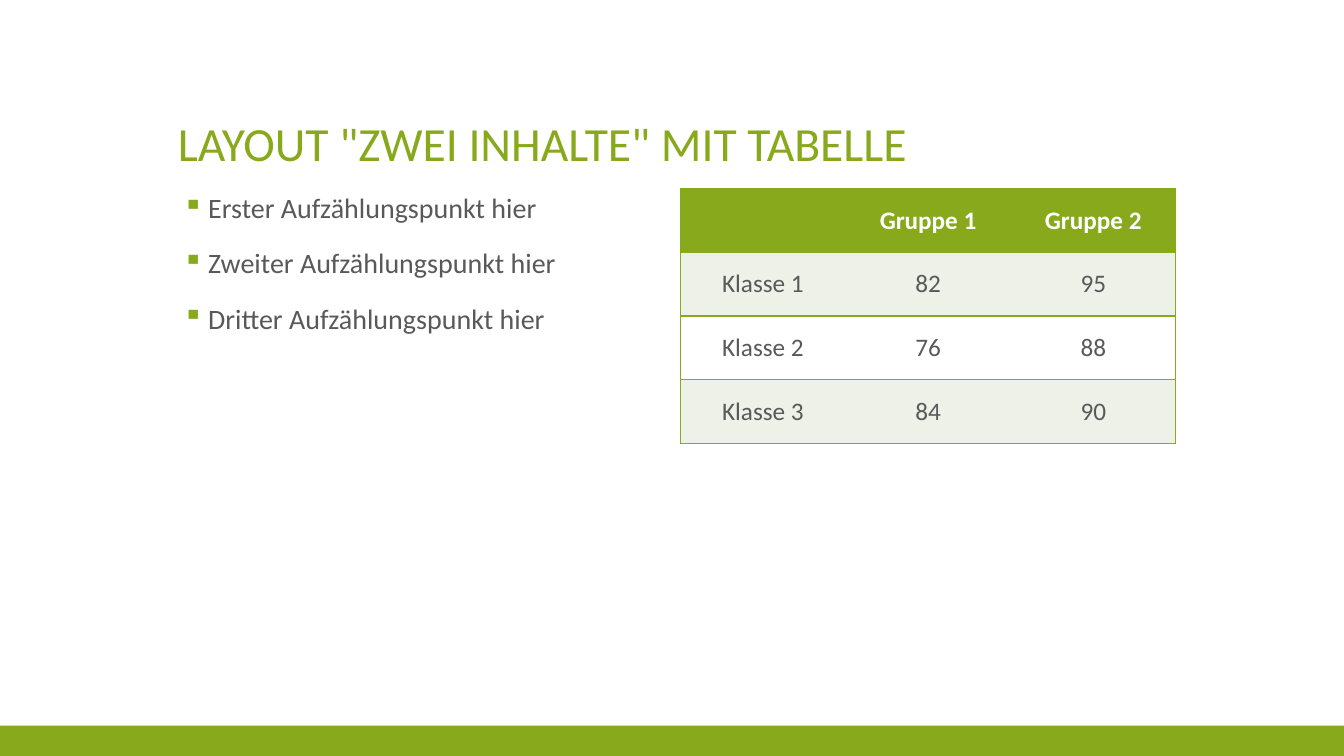
from dataclasses import dataclass

from lxml.etree import SubElement
from pptx import Presentation
from pptx.dml.color import RGBColor
from pptx.enum.shapes import MSO_SHAPE as Shape
from pptx.enum.text import MSO_ANCHOR as Anchor, PP_ALIGN as Align
from pptx.oxml.ns import qn
from pptx.util import Pt


@dataclass(frozen=True)
class Theme:
    font: str = "Calibri"
    green: str = "87A91B"
    band: str = "EDF1E8"
    white: str = "FFFFFF"
    grey: str = "595959"
    title_size: int = 34
    body_size: int = 20
    table_size: int = 18


theme = Theme()


def write(para, text, size, color, bold=False):
    """Add one styled run to a paragraph."""
    span = para.add_run()
    span.text = text
    span.font.color.rgb = RGBColor.from_string(color)
    for name, value in {"name": theme.font, "size": Pt(size), "bold": bold}.items():
        setattr(span.font, name, value)


def add_border(cell, side, color=None):
    """Draw a 1 pt line on one side of a cell, or none without a color."""
    line = SubElement(cell._tc.get_or_add_tcPr(), qn(f"a:ln{side}"), w=str(Pt(1)))
    if color:
        fill = SubElement(line, qn("a:solidFill"))
        SubElement(fill, qn("a:srgbClr"), val=color)
    else:
        SubElement(line, qn("a:noFill"))


deck = Presentation()
deck.slide_width, deck.slide_height = Pt(960), Pt(540)
page = deck.slides.add_slide(deck.slide_layouts[6])

# Footer band
footer = page.shapes.add_shape(Shape.RECTANGLE, Pt(0), Pt(518.4), Pt(960), Pt(21.6))
footer.shadow.inherit = False
footer.fill.solid()
footer.fill.fore_color.rgb = RGBColor.from_string(theme.green)
footer.line.fill.background()

# Title
title = page.shapes.add_textbox(Pt(120), Pt(36), Pt(720), Pt(90)).text_frame
title.word_wrap = True
title.vertical_anchor = Anchor.BOTTOM
title.paragraphs[0].line_spacing = 0.9
write(title.paragraphs[0], 'LAYOUT "ZWEI INHALTE" MIT TABELLE', theme.title_size, theme.green)

# Bullet list
body = page.shapes.add_textbox(Pt(120), Pt(135), Pt(354), Pt(351)).text_frame
body.word_wrap = True
for index, ordinal in enumerate(["Erster", "Zweiter", "Dritter"]):
    para = body.add_paragraph() if index else body.paragraphs[0]
    para.line_spacing = 0.9
    para.space_before = Pt(18)
    props = para._p.get_or_add_pPr()
    props.set("marL", str(Pt(21.6)))
    props.set("indent", str(Pt(-18)))
    bullet_color = SubElement(props, qn("a:buClr"))
    SubElement(bullet_color, qn("a:srgbClr"), val=theme.green)
    SubElement(props, qn("a:buChar"), char="▪")
    write(para, f"{ordinal} Aufzählungspunkt hier", theme.body_size, theme.grey)

# Table
rows = [
    ["", "Gruppe 1", "Gruppe 2"],
    ["Klasse 1", "82", "95"],
    ["Klasse 2", "76", "88"],
    ["Klasse 3", "84", "90"],
]
row_height, column_width = 45.4, 118
last_column = len(rows[0]) - 1
table = page.shapes.add_table(
    len(rows), len(rows[0]), Pt(486), Pt(135),
    Pt(column_width * len(rows[0])), Pt(row_height * len(rows)),
).table
for column in table.columns:
    column.width = Pt(column_width)

for r, values in enumerate(rows):
    table.rows[r].height = Pt(row_height)
    header = r == 0
    fill = theme.green if header else theme.band if r % 2 else theme.white
    for c, value in enumerate(values):
        cell = table.cell(r, c)
        cell.vertical_anchor = Anchor.MIDDLE
        add_border(cell, "L", theme.green if c == 0 else None)
        add_border(cell, "R", theme.green if c == last_column else None)
        add_border(cell, "T", theme.green)
        add_border(cell, "B", theme.green)
        cell.fill.solid()
        cell.fill.fore_color.rgb = RGBColor.from_string(fill)
        if value:
            para = cell.text_frame.paragraphs[0]
            para.alignment = Align.CENTER
            write(para, value, theme.table_size, theme.white if header else theme.grey, header)

deck.save("out.pptx")
